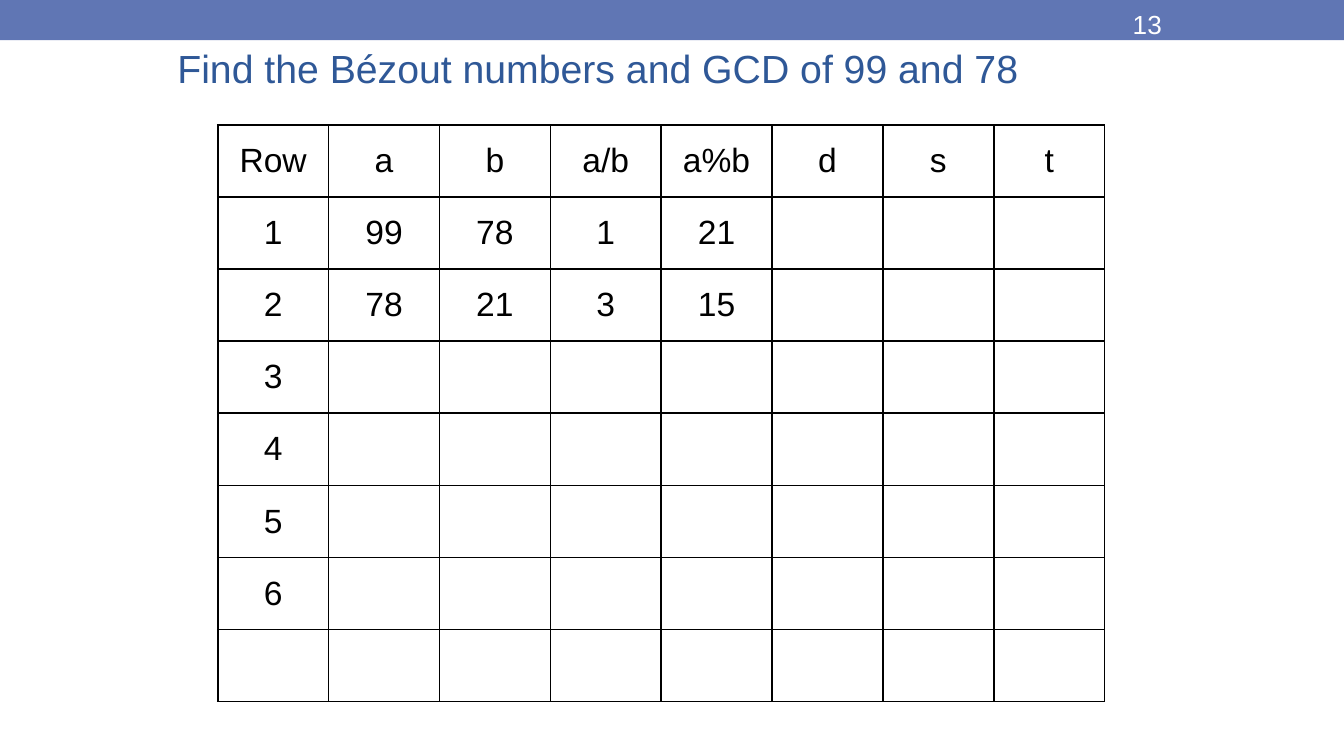
import pptx
import pptx.dml.color
import pptx.enum.shapes
import pptx.enum.text
import pptx.oxml
import pptx.oxml.ns
import pptx.util
from lxml import etree

HUES = {"band": "6076B4", "title": "2F5897", "ink": "000000", "page": "FFFFFF"}
FONT = "Arial"
WIDE = 10
HIGH = WIDE * 9 / 16
HEAD = ["Row", "a", "b", "a/b", "a%b", "d", "s", "t"]
ROWS = [
    HEAD,
    ["1", "99", "78", "1", "21"],
    ["2", "78", "21", "3", "15"],
    ["3"], ["4"], ["5"], ["6"],
    [],
]
ANCHOR = pptx.enum.text.MSO_ANCHOR
ALIGN = pptx.enum.text.PP_ALIGN


def hue(name):
    return pptx.dml.color.RGBColor.from_string(HUES[name])


def place(box):
    return [pptx.util.Inches(v) for v in box]


def add_run(para, text, size, color):
    run = para.add_run()
    run.text = text
    run.font.name = FONT
    run.font.size = pptx.util.Pt(size)
    run.font.color.rgb = hue(color)


def add_label(slide, box, text, size, color, anchor, pads):
    frame = slide.shapes.add_textbox(*place(box)).text_frame
    frame.word_wrap = True
    frame.vertical_anchor = anchor
    side, edge = place(pads)
    frame.margin_left = frame.margin_right = side
    frame.margin_top = frame.margin_bottom = edge
    add_run(frame.paragraphs[0], text, size, color)


def add_band(slide, box):
    band = slide.shapes.add_shape(
        pptx.enum.shapes.MSO_SHAPE.RECTANGLE, *place(box))
    band.shadow.inherit = False
    band.fill.solid()
    band.fill.fore_color.rgb = hue("band")
    band.line.fill.background()


def add_edges(cell):
    props = cell._tc.get_or_add_tcPr()
    for spot, side in enumerate(("lnL", "lnR", "lnT", "lnB")):
        line = etree.Element(pptx.oxml.ns.qn("a:" + side),
                             w=str(pptx.util.Pt(1)))
        fill = etree.SubElement(line, pptx.oxml.ns.qn("a:solidFill"))
        etree.SubElement(fill, pptx.oxml.ns.qn("a:srgbClr"), val=HUES["ink"])
        props.insert(spot, line)


def add_grid(slide, box, rows, cols):
    left, top, width, height = place(box)
    table = slide.shapes.add_table(
        len(rows), cols, left, top, width, height).table
    table.first_row = table.horz_banding = False
    for col in table.columns:
        col.width = width // cols
    for row in table.rows:
        row.height = height // len(rows)
    for r, words in enumerate(rows):
        for c in range(cols):
            cell = table.cell(r, c)
            cell.fill.background()
            cell.vertical_anchor = ANCHOR.MIDDLE
            cell.margin_left = cell.margin_right = pptx.util.Inches(0.08)
            cell.margin_top = cell.margin_bottom = pptx.util.Inches(0.04)
            add_edges(cell)
            if c < len(words):
                para = cell.text_frame.paragraphs[0]
                para.alignment = ALIGN.CENTER
                add_run(para, words[c], 18, "ink")


def main():
    deck = pptx.Presentation()
    deck.slide_width, deck.slide_height = place((WIDE, HIGH))
    slide = deck.slides.add_slide(deck.slide_layouts[6])
    slide.background.fill.solid()
    slide.background.fill.fore_color.rgb = hue("page")

    # Top band
    add_band(slide, (0, 0, WIDE, 0.3))

    # Title
    add_label(slide, (WIDE / 8, 0, WIDE * 3 / 4, 0.75),
              "Find the Bézout numbers and GCD of 99 and 78",
              21, "title", ANCHOR.BOTTOM, (0.07, 0.07))

    # Table of steps
    add_grid(slide, (1.62, 0.93, 6.6, 4.29), ROWS, len(HEAD))

    # Page number
    add_label(slide, (8.33, 0.01, 1.17, 0.27), "13",
              14, "page", ANCHOR.TOP, (0.1, 0.05))

    deck.save("out.pptx")


if __name__ == "__main__":
    main()
